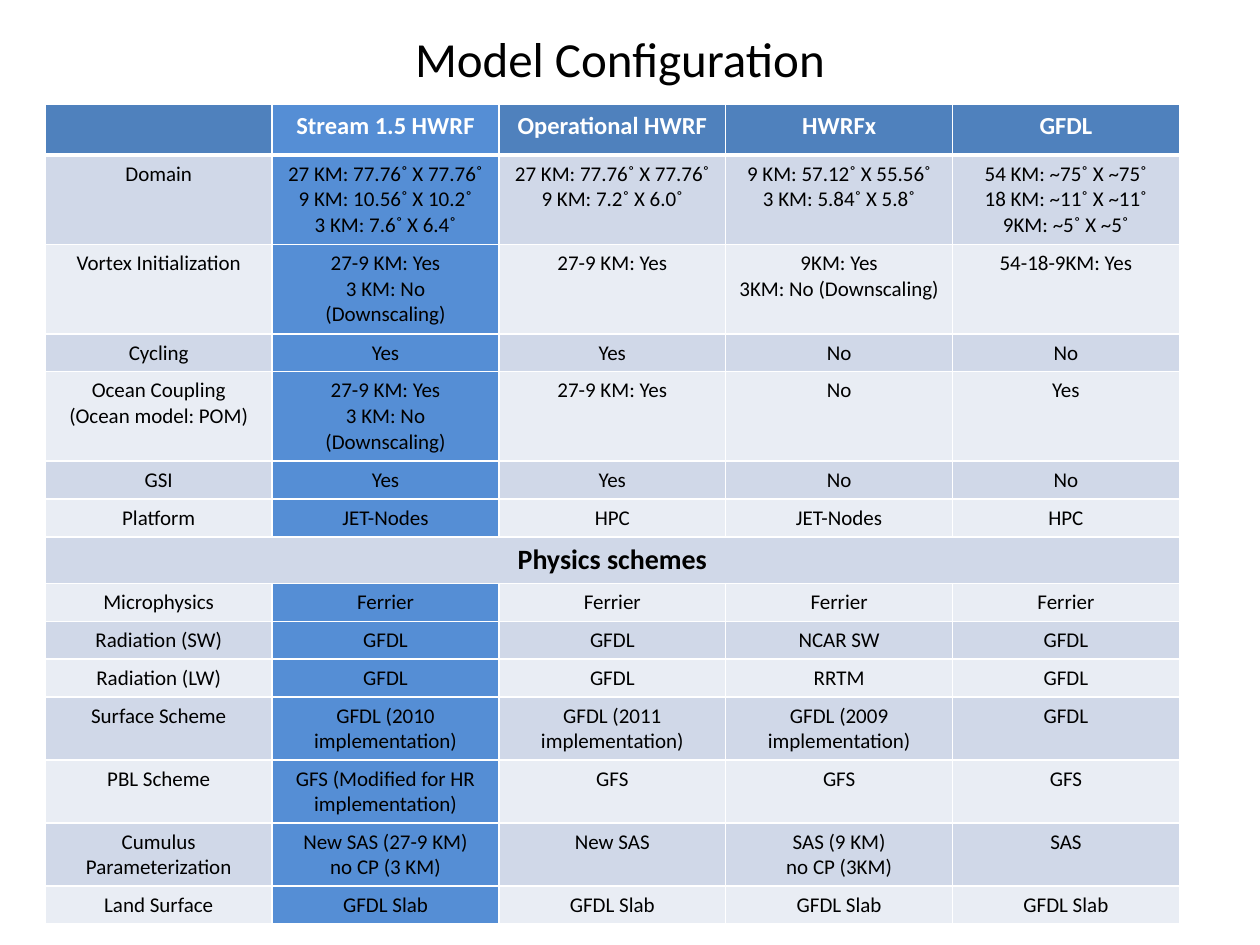
from lxml import etree
from pptx import Presentation
from pptx import util as u
from pptx.dml.color import RGBColor
from pptx.enum import text
from pptx.oxml.ns import qn

THEME = {
    "font": "Calibri",
    "title": {"size": 28, "color": "000000", "bold": False},
    "header": {"size": 14, "color": "FFFFFF", "bold": True},
    "section": {"size": 16, "color": "000000", "bold": True},
    "body": {"size": 12, "color": "000000", "bold": False},
    "header_fill": "4F81BD",
    "highlight": "558ED5",
    "bands": ("E9EDF4", "D0D8E8"),
    "border": "FFFFFF",
}
WIDTH, HEIGHT = u.Inches(10), u.Inches(7.5)
COLUMNS, HIGHLIGHT_COLUMN = 5, 1
COLUMN_WIDTH = u.Inches(1.8)
THIN, THICK = u.Pt(1), u.Pt(3)

# Row heights in inches, by kind of row
HEADER, ONE, TWO, THREE, SECTION = 0.33, 0.3, 0.5, 0.71, 0.37

# Each row: height, then its cells; a line break starts a new paragraph
ROWS = [
    (HEADER, "", "Stream 1.5 HWRF", "Operational HWRF", "HWRFx", "GFDL"),
    (THREE, "Domain",
     "27 KM: 77.76˚ X 77.76˚\n9 KM: 10.56˚ X 10.2˚\n3 KM: 7.6˚ X 6.4˚",
     "27 KM: 77.76˚ X 77.76˚\n9 KM: 7.2˚ X 6.0˚",
     "9 KM: 57.12˚ X 55.56˚\n3 KM: 5.84˚ X 5.8˚",
     "54 KM: ~75˚ X ~75˚\n18 KM: ~11˚ X ~11˚\n9KM: ~5˚ X ~5˚"),
    (THREE, "Vortex Initialization", "27-9 KM: Yes\n3 KM: No (Downscaling)",
     "27-9 KM: Yes", "9KM: Yes\n3KM: No (Downscaling)", "54-18-9KM: Yes"),
    (ONE, "Cycling", "Yes", "Yes", "No", "No"),
    (THREE, "Ocean Coupling\n(Ocean model: POM)",
     "27-9 KM: Yes\n3 KM: No (Downscaling)", "27-9 KM: Yes", "No", "Yes"),
    (ONE, "GSI", "Yes", "Yes", "No", "No"),
    (ONE, "Platform", "JET-Nodes", "HPC", "JET-Nodes", "HPC"),
    (SECTION, "Physics schemes"),
    (ONE, "Microphysics", "Ferrier", "Ferrier", "Ferrier", "Ferrier"),
    (ONE, "Radiation (SW)", "GFDL", "GFDL", "NCAR SW", "GFDL"),
    (ONE, "Radiation (LW)", "GFDL", "GFDL", "RRTM", "GFDL"),
    (TWO, "Surface Scheme", "GFDL (2010 implementation)",
     "GFDL (2011 implementation)", "GFDL (2009 implementation)", "GFDL"),
    (TWO, "PBL Scheme", "GFS (Modified for HR implementation)",
     "GFS", "GFS", "GFS"),
    (TWO, "Cumulus Parameterization", "New SAS (27-9 KM)\nno CP (3 KM)",
     "New SAS", "SAS (9 KM)\nno CP (3KM)", "SAS"),
    (ONE, "Land Surface", "GFDL Slab", "GFDL Slab", "GFDL Slab", "GFDL Slab"),
]


def write(tf, content, style):
    """Fill a text frame with centred paragraphs in one style."""
    tf.text = content
    values = {"name": THEME["font"], "size": u.Pt(style["size"]),
              "bold": style["bold"]}
    for p in tf.paragraphs:
        p.alignment = text.PP_ALIGN.CENTER
        for r in p.runs:
            for name, value in values.items():
                setattr(r.font, name, value)
            r.font.color.rgb = RGBColor.from_string(style["color"])


def add_borders(cell, top, bottom):
    """Draw all four edges; call before filling, as the schema orders them."""
    tc_pr = cell._tc.get_or_add_tcPr()
    edges = {"a:lnL": THIN, "a:lnR": THIN, "a:lnT": top, "a:lnB": bottom}
    for tag, width in edges.items():
        ln = etree.SubElement(tc_pr, qn(tag), w=str(int(width)))
        fill = etree.SubElement(ln, qn("a:solidFill"))
        etree.SubElement(fill, qn("a:srgbClr"), val=THEME["border"])


def cell_color(row, column, is_section):
    if column == HIGHLIGHT_COLUMN and not is_section:
        return THEME["highlight"]
    return THEME["header_fill"] if row == 0 else THEME["bands"][row % 2]


def add_title(slide, content):
    sp = slide.shapes.add_textbox(u.Inches(0.42), 0, u.Inches(9), u.Inches(0.92))
    tf = sp.text_frame
    tf.word_wrap = True
    tf.vertical_anchor = text.MSO_ANCHOR.MIDDLE
    write(tf, content, THEME["title"])


def add_configuration_table(slide):
    height = u.Inches(sum(row[0] for row in ROWS))
    table = slide.shapes.add_table(
        len(ROWS), COLUMNS, u.Inches(0.36), u.Inches(0.83),
        COLUMN_WIDTH * COLUMNS, height).table
    table.first_row = table.horz_banding = False
    for column in table.columns:
        column.width = COLUMN_WIDTH

    for i, (row_height, *contents) in enumerate(ROWS):
        table.rows[i].height = u.Inches(row_height)
        is_section = len(contents) == 1
        style = THEME["header" if i == 0 else
                      "section" if is_section else "body"]
        # Borders and fills
        for j in range(COLUMNS):
            cell = table.cell(i, j)
            add_borders(cell, THICK if i == 1 else THIN,
                        THICK if i == 0 else THIN)
            cell.fill.solid()
            cell.fill.fore_color.rgb = RGBColor.from_string(
                cell_color(i, j, is_section))
        # Text
        if is_section:
            table.cell(i, 0).merge(table.cell(i, COLUMNS - 1))
        for j, content in enumerate(contents):
            if content:
                write(table.cell(i, j).text_frame, content, style)


def main():
    prs = Presentation()
    prs.slide_width, prs.slide_height = WIDTH, HEIGHT
    slide = prs.slides.add_slide(prs.slide_layouts[6])
    add_title(slide, "Model Configuration")
    add_configuration_table(slide)
    prs.save("out.pptx")


if __name__ == "__main__":
    main()
